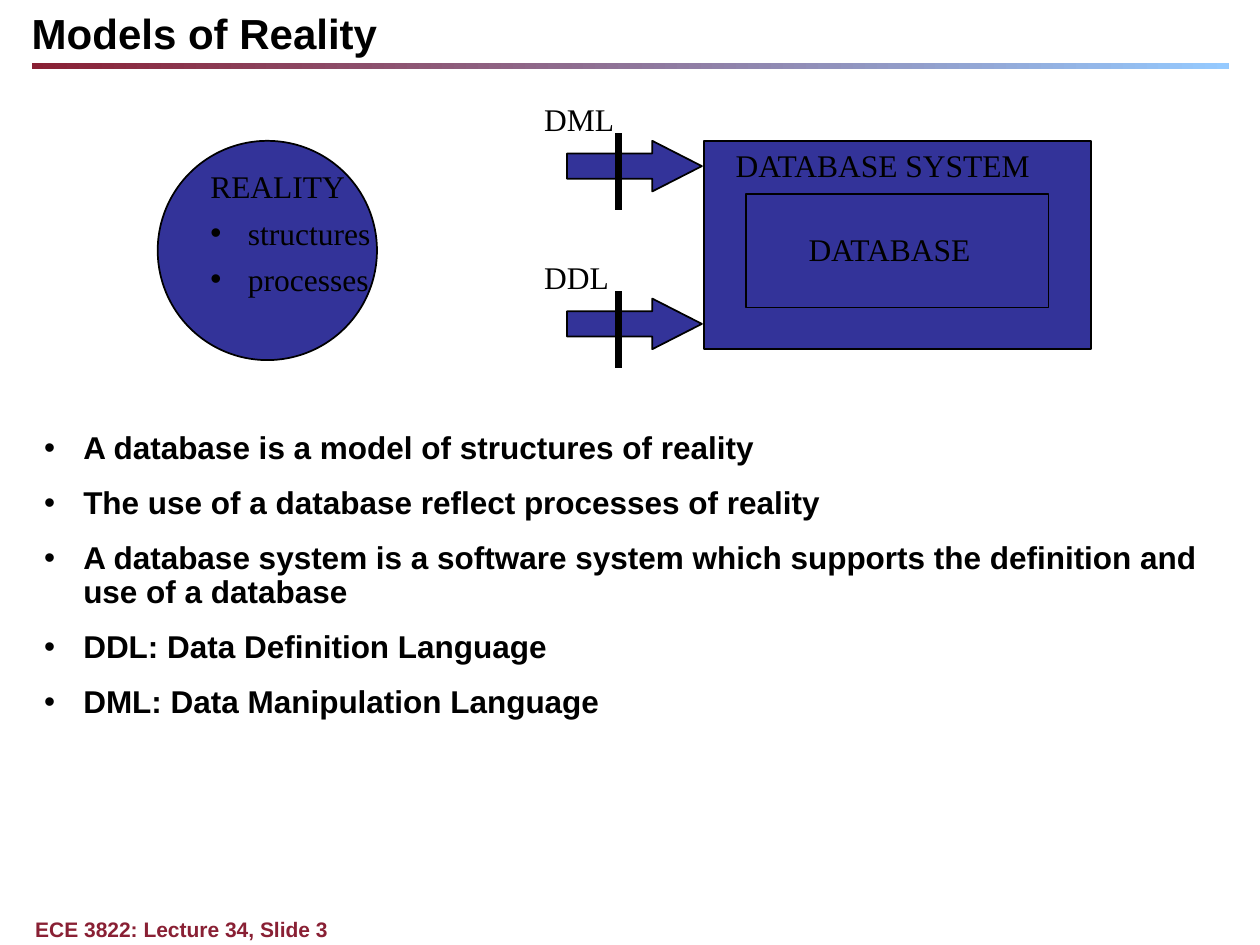
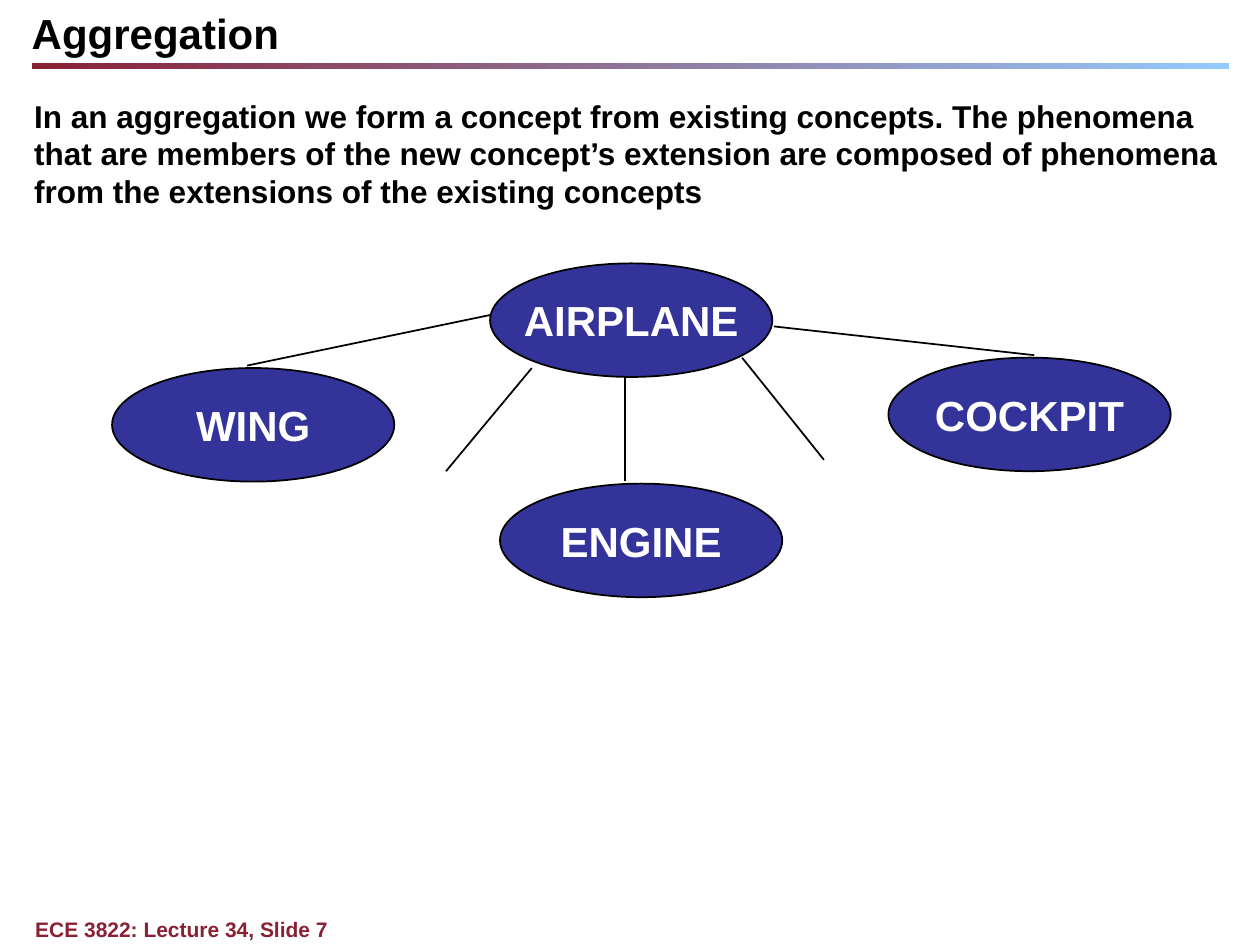
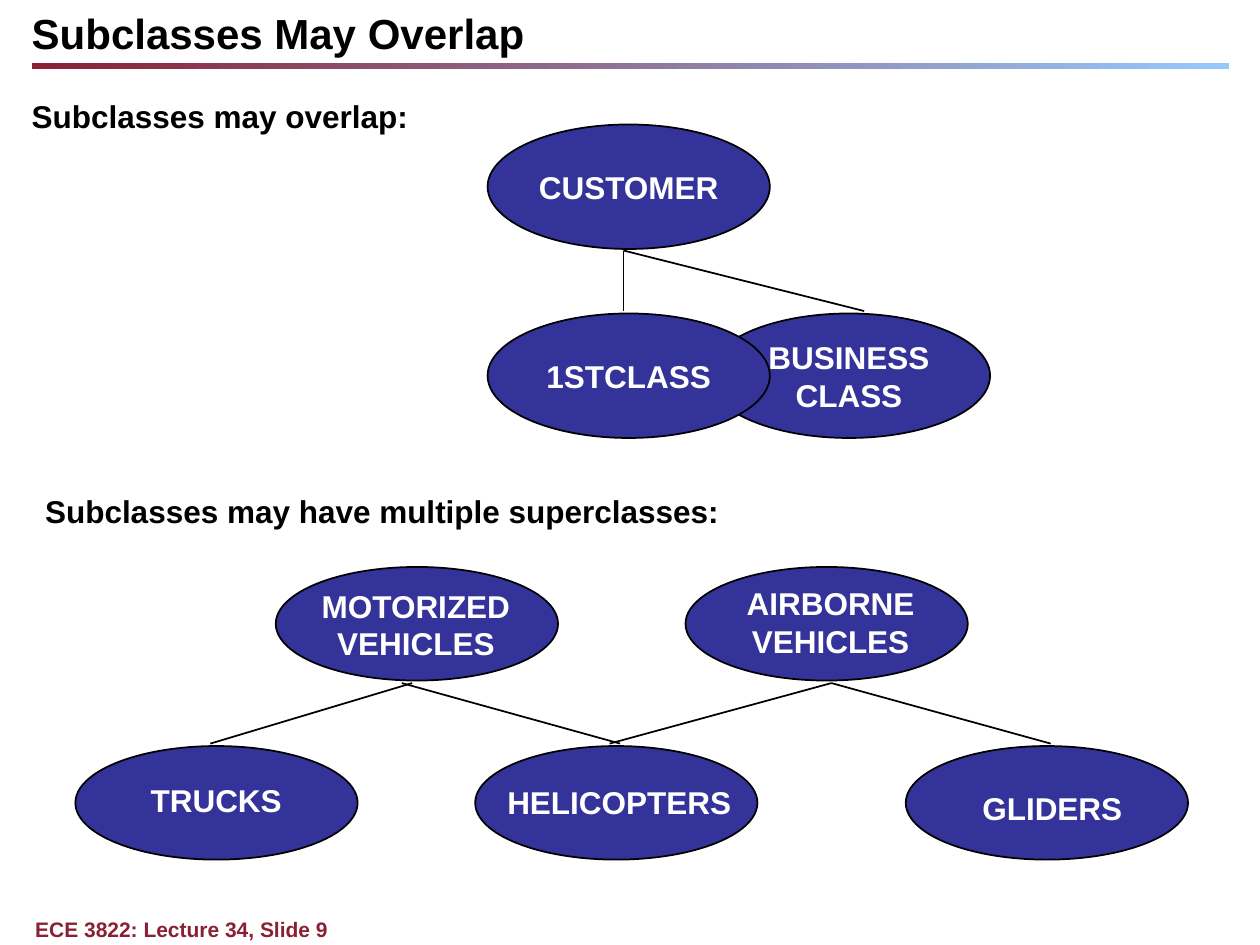
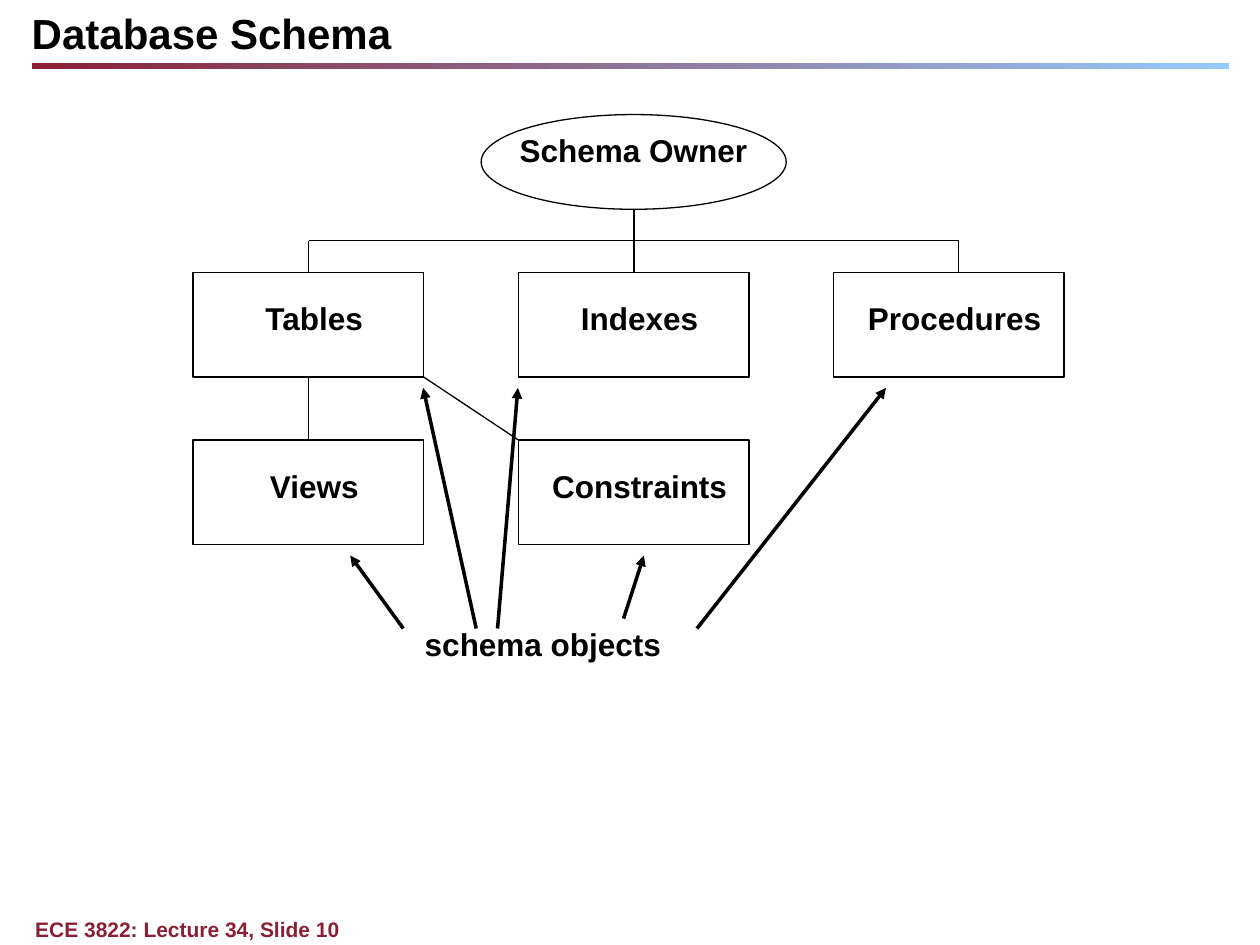
from dataclasses import dataclass
from typing import NamedTuple

from lxml.etree import SubElement
from pptx import Presentation
from pptx.dml.color import RGBColor
from pptx.enum.shapes import MSO_CONNECTOR, MSO_SHAPE
from pptx.enum.text import MSO_ANCHOR, MSO_AUTO_SIZE, PP_ALIGN
from pptx.oxml.ns import qn
from pptx.util import Cm, Pt

BLACK = RGBColor(0x00, 0x00, 0x00)
WHITE = RGBColor(0xFF, 0xFF, 0xFF)
INDIGO = RGBColor(0x33, 0x33, 0x99)
MAROON = RGBColor(0x89, 0x20, 0x34)
SKY = RGBColor(0x95, 0xCA, 0xFF)

TITLE_ONLY_LAYOUT = 5


@dataclass(frozen=True)
class TextStyle:
    size: float = 18
    color: RGBColor = BLACK
    font: str = "Arial"
    bold: bool = True
    align: PP_ALIGN = PP_ALIGN.LEFT


HEADING = TextStyle(size=24)
FOOTER = TextStyle(size=12, color=MAROON)
BODY = TextStyle()
CENTERED = TextStyle(align=PP_ALIGN.CENTER)
NODE = TextStyle(color=WHITE, align=PP_ALIGN.CENTER)
LARGE_NODE = TextStyle(size=24, color=WHITE, align=PP_ALIGN.CENTER)
SERIF = TextStyle(font="Times New Roman", bold=False)


class Box(NamedTuple):
    """Position and size in centimetres."""
    left: float
    top: float
    width: float
    height: float


class Segment(NamedTuple):
    """Start and end points in centimetres."""
    start_x: float
    start_y: float
    end_x: float
    end_y: float


class Concept(NamedTuple):
    text: str
    left: float
    top: float


class Label(NamedTuple):
    text: str
    box: Box


class SchemaObject(NamedTuple):
    name: str
    column: int
    row: int
    label_width: float


def write_text(text_frame, text: str, style: TextStyle, inset: bool = False) -> None:
    if not inset:
        text_frame.margin_left = text_frame.margin_right = 0
        text_frame.margin_top = text_frame.margin_bottom = 0
    text_frame.text = text
    for paragraph in text_frame.paragraphs:
        paragraph.alignment = style.align
        for run in paragraph.runs:
            run.font.name = style.font
            run.font.size = Pt(style.size)
            run.font.bold = style.bold
            run.font.color.rgb = style.color


def add_text(slide, text: str, box: Box, style: TextStyle = BODY,
             inset: bool = False, wrap: bool = True):
    text_box = slide.shapes.add_textbox(*map(Cm, box))
    text_box.text_frame.word_wrap = wrap
    write_text(text_box.text_frame, text, style, inset)
    return text_box.text_frame


def add_bullet(paragraph, indent: float) -> None:
    properties = paragraph._p.get_or_add_pPr()
    properties.set("marL", str(Cm(indent)))
    properties.set("indent", str(-Cm(indent)))
    SubElement(properties, qn("a:buFont")).set("typeface", "Arial")
    SubElement(properties, qn("a:buChar")).set("char", "•")


def add_outlined(slide, kind: MSO_SHAPE, box: Box,
                 fill: RGBColor | None = INDIGO, line_width: float = 1):
    shape = slide.shapes.add_shape(kind, *map(Cm, box))
    shape.shadow.inherit = False
    if fill is None:
        shape.fill.background()
    else:
        shape.fill.solid()
        shape.fill.fore_color.rgb = fill
    shape.line.color.rgb = BLACK
    shape.line.width = Pt(line_width)
    return shape


def add_concept(slide, concept: Concept, height: float, style: TextStyle) -> None:
    box = Box(concept.left, concept.top, 5.69, height)
    text_frame = add_outlined(slide, MSO_SHAPE.OVAL, box).text_frame
    text_frame.word_wrap = False
    text_frame.vertical_anchor = MSO_ANCHOR.MIDDLE
    write_text(text_frame, concept.text, style, inset=True)


def add_line(slide, segment: Segment, width: float = 1, arrow: bool = False) -> None:
    connector = slide.shapes.add_connector(MSO_CONNECTOR.STRAIGHT, *map(Cm, segment))
    connector.line.color.rgb = BLACK
    connector.line.width = Pt(width)
    if arrow:
        SubElement(connector.line._get_or_add_ln(), qn("a:tailEnd")).set("type", "triangle")
    SubElement(connector.element.spPr, qn("a:effectLst"))


def add_lecture_slide(presentation, title: str, number: int):
    """Add a slide with the shared title, gradient rule and footer."""
    slide = presentation.slides.add_slide(presentation.slide_layouts[TITLE_ONLY_LAYOUT])
    heading = slide.shapes.title
    heading.left, heading.top, heading.width, heading.height = map(Cm, (0.64, 0.15, 23.83, 1.02))
    heading.text_frame.auto_size = MSO_AUTO_SIZE.NONE
    heading.text_frame.vertical_anchor = MSO_ANCHOR.TOP
    write_text(heading.text_frame, title, HEADING)

    rule = slide.shapes.add_shape(MSO_SHAPE.RECTANGLE, *map(Cm, (0.64, 1.27, 24.13, 0.13)))
    rule.shadow.inherit = False
    rule.line.fill.background()
    rule.fill.gradient()
    rule.fill.gradient_angle = 0
    for stop, color in zip(rule.fill.gradient_stops, (MAROON, SKY)):
        stop.color.rgb = color

    add_text(slide, f"ECE 3822: Lecture 34, Slide {number}", Box(0.71, 18.47, 22.66, 0.51), FOOTER)
    return slide


def build_models_of_reality(presentation) -> None:
    slide = add_lecture_slide(presentation, "Models of Reality", 3)
    add_outlined(slide, MSO_SHAPE.OVAL, Box(3.18, 2.84, 4.42, 4.42))
    reality = add_text(slide, "REALITY\nstructures\nprocesses",
                       Box(3.99, 3.25, 4.9, 3.02), SERIF, inset=True)
    for paragraph in reality.paragraphs[1:]:
        add_bullet(paragraph, 0.76)
        paragraph.line_spacing = 0.8
        paragraph.space_before = Pt(9)

    add_outlined(slide, MSO_SHAPE.RECTANGLE, Box(14.2, 2.84, 7.8, 4.19))
    add_text(slide, "DATABASE SYSTEM", Box(14.58, 2.82, 6.81, 1.04), SERIF, inset=True)
    add_outlined(slide, MSO_SHAPE.RECTANGLE, Box(15.04, 3.91, 6.1, 2.29))
    add_text(slide, "DATABASE", Box(16.05, 4.52, 4.04, 1.04), SERIF, inset=True)

    for index, language in enumerate(("DML", "DDL")):
        offset = index * 3.18
        arrow = add_outlined(slide, MSO_SHAPE.RIGHT_ARROW, Box(11.43, 2.84 + offset, 2.72, 1.02))
        arrow.adjustments[1] = 0.98
        add_line(slide, Segment(12.47, 2.69 + offset, 12.47, 4.24 + offset), width=4)
        add_text(slide, language, Box(10.72, 1.9 + offset, 2.2, 1.04), SERIF, inset=True)

    statements = (
        "A database is a model of structures of reality",
        "The use of a database reflect processes of reality",
        "A database system is a software system which supports the definition and use of a database",
        "DDL: Data Definition Language",
        "DML: Data Manipulation Language",
    )
    body = add_text(slide, "\n".join(statements), Box(0.64, 8.59, 24.13, 7.09), inset=True)
    for paragraph in body.paragraphs:
        add_bullet(paragraph, 0.79)
        paragraph.line_spacing = 0.9
        paragraph.space_after = Pt(12)


def build_aggregation(presentation) -> None:
    slide = add_lecture_slide(presentation, "Aggregation", 7)
    add_text(slide, "In an aggregation we form a concept from existing concepts. "
                    "The phenomena that are members of the new concept’s extension are composed "
                    "of phenomena from the extensions of the existing concepts",
             Box(0.69, 1.95, 24, 2.31))
    for concept in (
        Concept("AIRPLANE", 9.88, 5.31),
        Concept("COCKPIT", 17.91, 7.21),
        Concept("ENGINE", 10.08, 9.75),
        Concept("WING", 2.26, 7.42),
    ):
        add_concept(slide, concept, 2.29, LARGE_NODE)
    for segment in (
        Segment(9.88, 6.35, 4.98, 7.37),
        Segment(15.6, 6.58, 20.85, 7.16),
        Segment(12.6, 7.62, 12.6, 9.7),
        Segment(10.72, 7.42, 8.99, 9.5),
        Segment(14.96, 7.21, 16.61, 9.27),
    ):
        add_line(slide, segment)


def build_subclasses(presentation) -> None:
    slide = add_lecture_slide(presentation, "Subclasses May Overlap", 9)
    for concept in (
        Concept("CUSTOMER", 9.83, 2.51),
        Concept("BUSINESS\nCLASS", 14.27, 6.32),
        Concept("1STCLASS", 9.83, 6.32),
    ):
        add_concept(slide, concept, 2.51, NODE)
    add_text(slide, "Subclasses may overlap:", Box(0.64, 1.95, 22.05, 0.76))
    for subclass_x in (12.57, 17.42):
        add_line(slide, Segment(12.57, 5.05, subclass_x, 6.27))

    add_text(slide, "Subclasses may have multiple superclasses:",
             Box(0.66, 9.8, 20.78, 1.02), inset=True)
    superclass_top, subclass_top = 11.43, 15.04
    for left, top in (
        (5.56, superclass_top), (13.82, superclass_top),
        (18.26, subclass_top), (1.52, subclass_top), (9.58, subclass_top),
    ):
        add_outlined(slide, MSO_SHAPE.OVAL, Box(left, top, 5.69, 2.29))
    for label in (
        Label("MOTORIZED VEHICLES", Box(6.15, 11.7, 4.47, 1.78)),
        Label("AIRBORNE VEHICLES", Box(14.41, 11.65, 4.67, 1.78)),
        Label("TRUCKS", Box(2.34, 15.62, 4.04, 1.02)),
        Label("HELICOPTERS", Box(9.93, 15.67, 5.11, 1.02)),
        Label("GLIDERS", Box(19.08, 15.79, 4.27, 1.02)),
    ):
        add_text(slide, label.text, label.box, NODE, inset=True)
    for superclass_x, subclass_x in ((8.31, 4.24), (8.1, 12.5), (16.76, 12.29), (16.76, 21.18)):
        add_line(slide, Segment(superclass_x, 13.77, subclass_x, 14.99))


def build_database_schema(presentation) -> None:
    slide = add_lecture_slide(presentation, "Database Schema", 10)
    columns = (3.89, 10.45, 16.8)
    rows = (5.49, 8.87)
    width, height = 4.65, 2.11
    for item in (
        SchemaObject("Tables", 0, 0, 2.49),
        SchemaObject("Indexes", 1, 0, 2.9),
        SchemaObject("Procedures", 2, 0, 4.04),
        SchemaObject("Views", 0, 1, 2.36),
        SchemaObject("Constraints", 1, 1, 4.06),
    ):
        left, top = columns[item.column], rows[item.row]
        add_outlined(slide, MSO_SHAPE.RECTANGLE, Box(left, top, width, height), None, 0.75)
        label_left = left + (width - item.label_width) / 2 + 0.12
        add_text(slide, item.name, Box(label_left, top + 0.42, item.label_width, 1.02),
                 CENTERED, inset=True, wrap=False)

    branch_y, tables_bottom = 4.85, rows[0] + height
    for segment in (
        Segment(6.22, tables_bottom, 6.22, rows[1]),
        Segment(6.22, branch_y, 6.22, rows[0]),
        Segment(12.78, 4.22, 12.78, rows[0]),
        Segment(19.33, branch_y, 19.33, rows[0]),
        Segment(6.22, branch_y, 19.33, branch_y),
        Segment(columns[0] + width, tables_bottom, columns[1], rows[1]),
    ):
        add_line(slide, segment, width=0.75)

    add_outlined(slide, MSO_SHAPE.OVAL, Box(9.7, 2.31, 6.15, 1.91), None, 0.75)
    for label in (
        Label("Schema Owner", Box(10.19, 2.51, 5.16, 1.02)),
        Label("schema objects", Box(8.28, 12.47, 5.33, 1.02)),
    ):
        add_text(slide, label.text, label.box, CENTERED, inset=True, wrap=False)
    for segment in (
        Segment(8.13, 12.67, 7.06, 11.2),
        Segment(10.03, 12.67, 10.44, 7.82),
        Segment(9.6, 12.67, 8.53, 7.82),
        Segment(12.57, 12.47, 12.98, 11.2),
        Segment(14.05, 12.67, 17.86, 7.82),
    ):
        add_line(slide, segment, width=2, arrow=True)


def main() -> None:
    presentation = Presentation()
    presentation.slide_width = Cm(25.4)
    presentation.slide_height = Cm(19.05)
    build_models_of_reality(presentation)
    build_aggregation(presentation)
    build_subclasses(presentation)
    build_database_schema(presentation)
    presentation.save("out.pptx")


if __name__ == "__main__":
    main()
